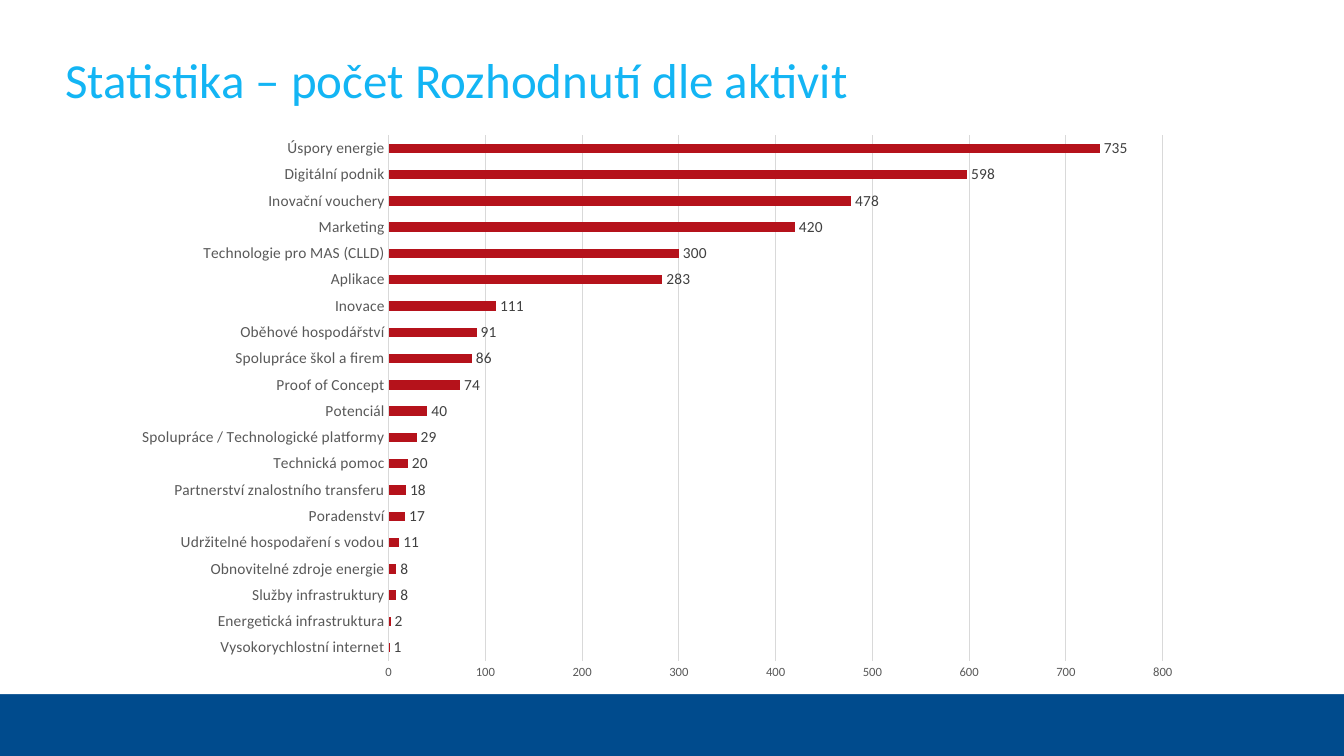
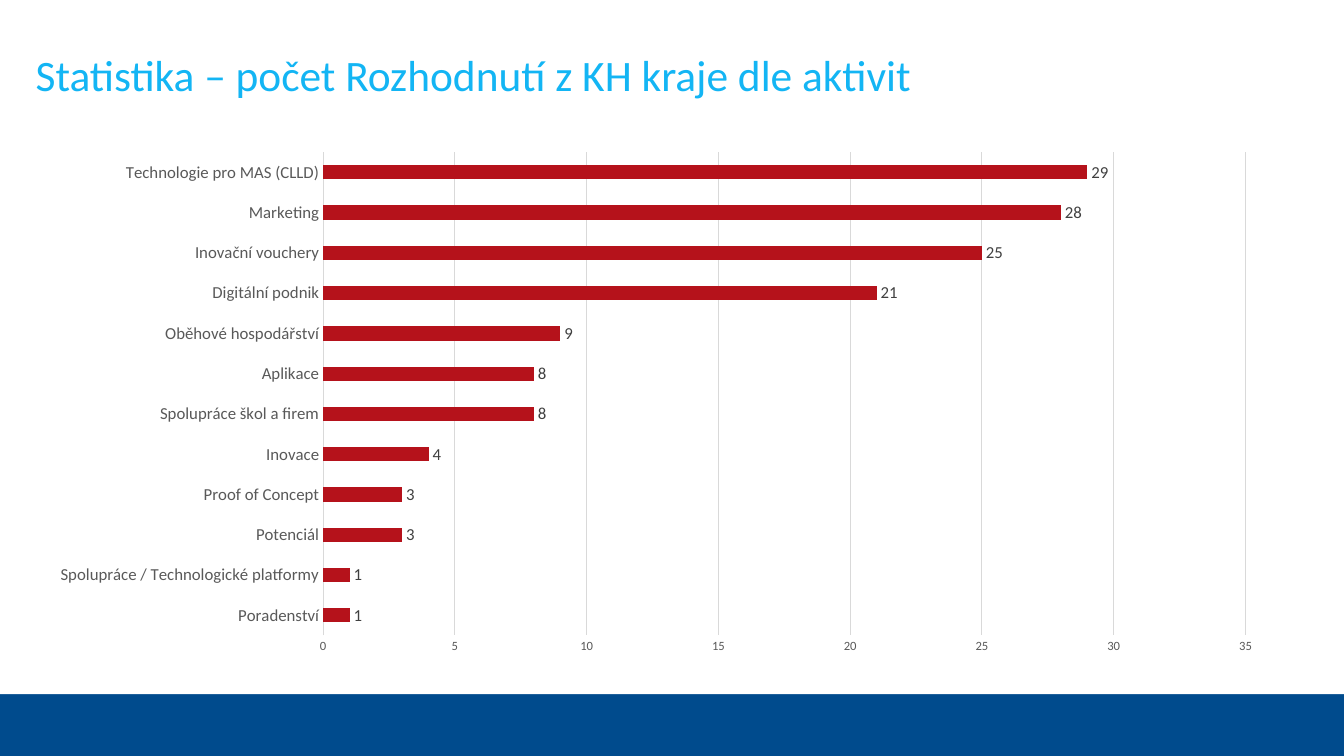
import pptx
import pptx.chart.data
import pptx.dml.color
import pptx.enum.chart
import pptx.enum.shapes
import pptx.enum.text
import pptx.util

PX = 9525  # EMU in one px
BLANK_LAYOUT = 6


class Theme:
    font = "Calibri"
    footer = "004B8D"
    page = "FFFFFF"
    title = "13B5F4"
    bar = "B5121B"
    value_text = "404040"
    axis_text = "595959"
    grid = "D9D9D9"
    chart_text = "000000"
    chart_size = 10
    scale_size = 9
    grid_width = 0.75
    gap_width = 182


STATISTICS = [
    {
        "title": "Statistika – počet Rozhodnutí dle aktivit",
        "title_box": (62, 47, 1154, 57),
        "title_size": 35,
        "chart_box": (115, 118, 1022, 540),
        "label_size": 11,
        "scale": (800, 100),
        "counts": {
            "Úspory energie": 735,
            "Digitální podnik": 598,
            "Inovační vouchery": 478,
            "Marketing": 420,
            "Technologie pro MAS (CLLD)": 300,
            "Aplikace": 283,
            "Inovace": 111,
            "Oběhové hospodářství": 91,
            "Spolupráce škol a firem": 86,
            "Proof of Concept": 74,
            "Potenciál": 40,
            "Spolupráce / Technologické platformy": 29,
            "Technická pomoc": 20,
            "Partnerství znalostního transferu": 18,
            "Poradenství": 17,
            "Udržitelné hospodaření s vodou": 11,
            "Obnovitelné zdroje energie": 8,
            "Služby infrastruktury": 8,
            "Energetická infrastruktura": 2,
            "Vysokorychlostní internet": 1,
        },
    },
    {
        "title": "Statistika – počet Rozhodnutí z KH kraje dle aktivit",
        "title_box": (34, 46, 1191, 50),
        "title_size": 31,
        "chart_box": (34, 135, 1182, 498),
        "label_size": 12,
        "scale": (35, 5),
        "counts": {
            "Technologie pro MAS (CLLD)": 29,
            "Marketing": 28,
            "Inovační vouchery": 25,
            "Digitální podnik": 21,
            "Oběhové hospodářství": 9,
            "Aplikace": 8,
            "Spolupráce škol a firem": 8,
            "Inovace": 4,
            "Proof of Concept": 3,
            "Potenciál": 3,
            "Spolupráce / Technologické platformy": 1,
            "Poradenství": 1,
        },
    },
]


def set_all(target, values):
    """Set each attribute named in the dict on the target."""
    for name, value in values.items():
        setattr(target, name, value)


def rgb(color):
    return pptx.dml.color.RGBColor.from_string(color)


def px(box):
    return [length * PX for length in box]


class Deck:
    """Holds the style, the presentation and the slide being built."""

    def __init__(self, theme):
        self.theme = theme
        self.presentation = pptx.Presentation()
        set_all(self.presentation,
                {"slide_width": 1280 * PX, "slide_height": 720 * PX})
        self.slide = None

    def style_font(self, font, size, color):
        set_all(font, {"name": self.theme.font, "size": pptx.util.Pt(size),
                       "bold": False})
        font.color.rgb = rgb(color)

    def style_line(self, line):
        line.color.rgb = rgb(self.theme.grid)
        line.width = pptx.util.Pt(self.theme.grid_width)

    def add_slide(self):
        """Start a white page that leaves the footer colour below it."""
        layout = self.presentation.slide_layouts[BLANK_LAYOUT]
        self.slide = self.presentation.slides.add_slide(layout)
        background = self.slide.background.fill
        background.solid()
        background.fore_color.rgb = rgb(self.theme.footer)
        page = self.slide.shapes.add_shape(
            pptx.enum.shapes.MSO_SHAPE.RECTANGLE, *px((0, 0, 1280, 661)))
        page.shadow.inherit = False
        page.fill.solid()
        page.fill.fore_color.rgb = rgb(self.theme.page)
        page.line.fill.background()

    def add_title(self, text, box, size):
        frame = self.slide.shapes.add_textbox(*px(box)).text_frame
        set_all(frame, {
            "margin_left": 0, "margin_top": 0,
            "margin_right": 0, "margin_bottom": 0,
            "word_wrap": True,
            "vertical_anchor": pptx.enum.text.MSO_ANCHOR.TOP,
        })
        paragraph = frame.paragraphs[0]
        paragraph.text = text
        self.style_font(paragraph.runs[0].font, size, self.theme.title)

    def add_bar_chart(self, counts, box, label_size, scale):
        """Draw the counts as bars, the first one on top."""
        data = pptx.chart.data.CategoryChartData(number_format="#,##0")
        data.categories = list(reversed(counts))
        data.add_series("Series 1", list(reversed(counts.values())))
        chart = self.slide.shapes.add_chart(
            pptx.enum.chart.XL_CHART_TYPE.BAR_CLUSTERED, *px(box), data).chart
        set_all(chart, {"has_legend": False, "has_title": False})
        self.style_font(chart.font, self.theme.chart_size,
                        self.theme.chart_text)
        plot = chart.plots[0]
        set_all(plot, {"gap_width": self.theme.gap_width,
                       "vary_by_categories": False,
                       "has_data_labels": True})
        set_all(plot.data_labels, {
            "show_value": True,
            "position": pptx.enum.chart.XL_LABEL_POSITION.OUTSIDE_END,
            "number_format": "#,##0",
            "number_format_is_linked": False,
        })
        self.style_font(plot.data_labels.font, label_size,
                        self.theme.value_text)
        bars = plot.series[0]
        bars.invert_if_negative = False
        bars.format.fill.solid()
        bars.format.fill.fore_color.rgb = rgb(self.theme.bar)
        self.style_axes(chart, label_size, scale)

    def style_axes(self, chart, label_size, scale):
        no_tick = pptx.enum.chart.XL_TICK_MARK.NONE
        axes = ((chart.category_axis, label_size),
                (chart.value_axis, self.theme.scale_size))
        for axis, size in axes:
            set_all(axis, {"major_tick_mark": no_tick,
                           "minor_tick_mark": no_tick})
            self.style_font(axis.tick_labels.font, size, self.theme.axis_text)
        chart.category_axis.has_major_gridlines = False
        self.style_line(chart.category_axis.format.line)
        maximum, step = scale
        set_all(chart.value_axis, {"minimum_scale": 0,
                                   "maximum_scale": maximum,
                                   "major_unit": step,
                                   "has_major_gridlines": True})
        set_all(chart.value_axis.tick_labels,
                {"number_format": "#,##0", "number_format_is_linked": False})
        chart.value_axis.format.line.fill.background()
        self.style_line(chart.value_axis.major_gridlines.format.line)


def main():
    deck = Deck(Theme())
    for page in STATISTICS:
        deck.add_slide()
        deck.add_title(page["title"], page["title_box"], page["title_size"])
        deck.add_bar_chart(page["counts"], page["chart_box"],
                           page["label_size"], page["scale"])
    deck.presentation.save("out.pptx")


if __name__ == "__main__":
    main()
